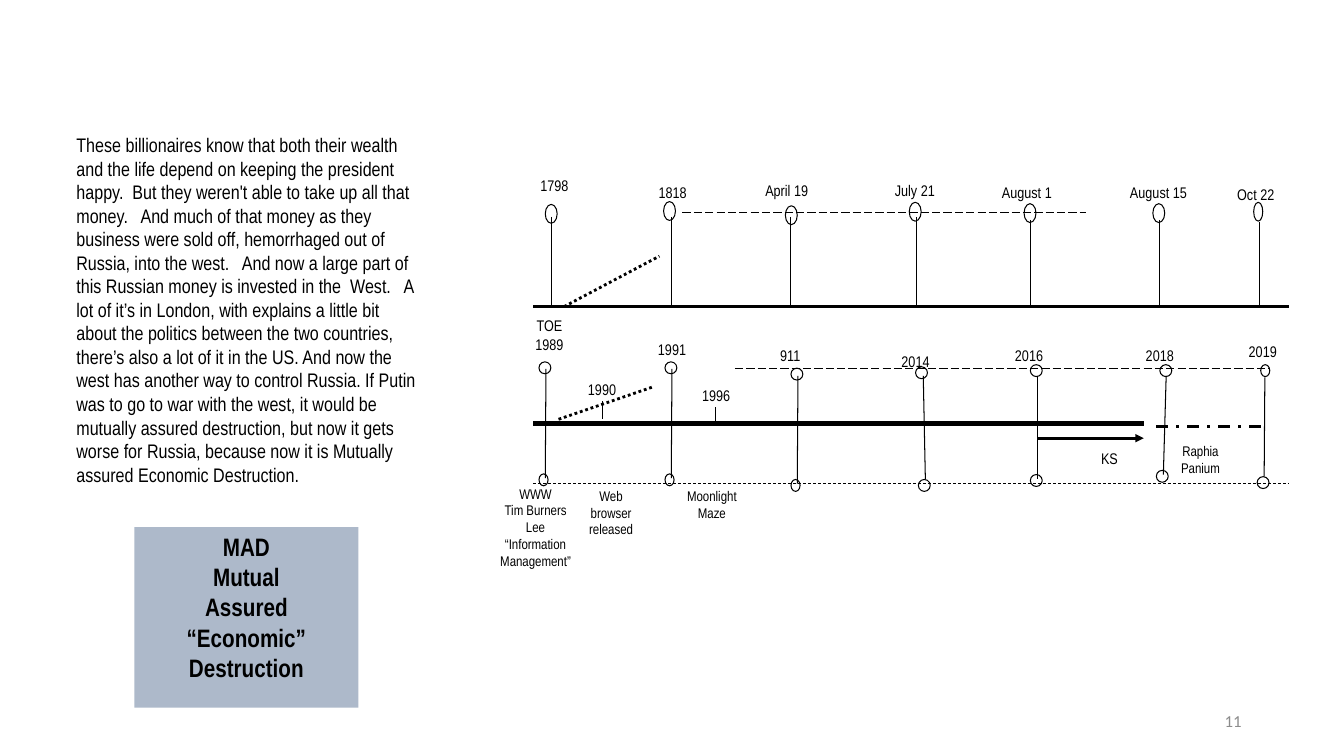
from lxml.etree import SubElement
from pptx import Presentation
from pptx.dml.color import RGBColor
from pptx.enum.dml import MSO_LINE as DASH
from pptx.enum.shapes import MSO_CONNECTOR as CONN, MSO_SHAPE as SHAPE
from pptx.enum.text import MSO_ANCHOR as ANCHOR, PP_ALIGN as ALIGN
from pptx.oxml.ns import qn
from pptx.util import Pt

hex_color = RGBColor.from_string
BLACK = "000000"

prs = Presentation()
prs.slide_width, prs.slide_height = Pt(960), Pt(540)
s = prs.slides.add_slide(prs.slide_layouts[6])


def add_line(x1, y1, x2, y2, width=0.75, dash=None, arrow=False):
    c = s.shapes.add_connector(CONN.STRAIGHT, Pt(x1), Pt(y1), Pt(x2), Pt(y2))
    c.line.color.rgb = hex_color(BLACK)
    c.line.width = Pt(width)
    if dash:
        c.line.dash_style = dash
    if arrow:
        SubElement(c.line._get_or_add_ln(), qn("a:tailEnd"), type="triangle")
    SubElement(c._element.spPr, qn("a:effectLst"))


def write_text(sp, text, size, align=ALIGN.CENTER, inset=(3, 3), bold=False,
               font="Arial Narrow", color=BLACK, anchor=ANCHOR.TOP):
    """Fill a shape with text, one paragraph per line of the string."""
    tf = sp.text_frame
    tf.word_wrap = True
    tf.vertical_anchor = anchor
    tf.margin_left = tf.margin_right = Pt(inset[0])
    tf.margin_top = tf.margin_bottom = Pt(inset[1])
    for i, line in enumerate(text.split("\n")):
        p = tf.add_paragraph() if i else tf.paragraphs[0]
        p.alignment = align
        r = p.add_run()
        r.text = line
        r.font.name, r.font.size, r.font.bold = font, Pt(size), bold
        r.font.color.rgb = hex_color(color)


# Upper timeline: stem x, stem top, circle (left, top, width)
upper_events = [
    (394, 155, (389.5, 146, 8.5)),
    (479.5, 155, (474, 144, 8.5)),
    (565, 155, (561, 147, 8.5)),
    (655, 155, (649.5, 144.5, 8.5)),
    (736, 157, (731.5, 145.5, 8.5)),
    (828.5, 157, (823.5, 145.5, 8.5)),
    (899.5, 158.5, (895.5, 144.5, 6.5)),
]
# Lower timeline: stem ends, top circle, bottom circle
lower_events = [
    ((390, 263.5, 389.5, 341.5), (385, 258.5, 8.5), (385, 338.5, 6.5)),
    ((480, 263.5, 479.5, 341.5), (475, 258.5, 8.5), (475, 338.5, 6.5)),
    ((570, 268.5, 569.5, 345.5), (565, 263, 8.5), (565, 342.5, 6.5)),
    ((659.5, 268.5, 661, 342.5), (654, 262, 8.5), (656, 342.5, 8.5)),
    ((741, 268.5, 741, 342), (736, 260.5, 8.5), (736, 339, 8.5)),
    ((833, 268.5, 831, 339), (828.5, 260.5, 8.5), (826, 336, 8.5)),
    ((903.5, 269.5, 903, 340.5), (900.5, 260.5, 6.5), (898, 340.5, 8.5)),
]
circles = []
for x, top, circle in upper_events:
    add_line(x, top, x, 218.5)
    circles.append((*circle, 13.5))
for stem, top_circle, bottom_circle in lower_events:
    add_line(*stem)
    circles += [(*top_circle, 8.5), (*bottom_circle, 8.5)]
for x, y, w, h in circles:
    sp = s.shapes.add_shape(SHAPE.OVAL, Pt(x), Pt(y), Pt(w), Pt(h))
    sp.shadow.inherit = False
    sp.fill.background()
    sp.line.color.rgb = hex_color(BLACK)
    sp.line.width = Pt(0.75)

# Axes, links and ticks
add_line(381, 219, 921, 219, 2)
add_line(487.5, 151.5, 776, 151.5, dash=DASH.LONG_DASH)
add_line(403, 219, 471, 183, 2, DASH.ROUND_DOT)
add_line(381, 302.5, 817, 302.5, 3)
add_line(525, 263.5, 907, 263.5, dash=DASH.LONG_DASH)
add_line(399, 299.5, 466, 276.5, 2, DASH.ROUND_DOT)
add_line(741, 313, 817, 313, 2, arrow=True)
add_line(826, 304.5, 903, 304.5, 2, DASH.DASH_DOT)
add_line(381, 345, 921, 345, 0.5, DASH.DASH)
add_line(430, 286.5, 430, 299.5, 0.5)
add_line(511, 291, 511, 304.5, 0.5)

# Labels: text, centre x, top, width, font size
labels = [
    ("1798", 396, 123, 48, 11), ("1818", 480.5, 127.5, 48, 11),
    ("April 19", 562, 126.5, 48, 11), ("July 21", 653.5, 126.5, 48, 11),
    ("August 1", 733.5, 127.5, 48, 11), ("August 15", 827.5, 127.5, 48, 11),
    ("Oct 22", 897, 129, 48, 11),
    ("TOE\n1989", 392.5, 223, 50, 11), ("1991", 480, 240, 37, 11),
    ("911", 564.5, 244, 35, 11), ("2014", 654, 248.5, 41, 11),
    ("2016", 735, 244, 43, 11), ("2018", 828.5, 244, 41, 11),
    ("2019", 902, 241, 38, 11),
    ("1990", 430, 268.5, 37, 11), ("1996", 511.5, 273, 37, 11),
    ("KS", 792.5, 317.5, 23, 11), ("Raphia\nPanium", 857.5, 313, 45, 10),
    ("WWW\nTim Burners Lee\n“Information Management”", 382.5, 343.5, 60, 10),
    ("Web browser released", 436.5, 345, 50, 10),
    ("Moonlight Maze", 508.5, 345, 50, 10),
]
for text, center, top, width, size in labels:
    height = 18 + 14 * text.count("\n")
    tb = s.shapes.add_textbox(Pt(center - width / 2), Pt(top), Pt(width), Pt(height))
    write_text(tb, text, size)

story = (
    "These billionaires know that both their wealth and the life depend on "
    "keeping the president happy.  But they weren't able to take up all that "
    "money.   And much of that money as they business were sold off, "
    "hemorrhaged out of Russia, into the west.   And now a large part of this "
    "Russian money is invested in the  West.   A lot of it’s in London, "
    "with explains a little bit about the politics between the two countries, "
    "there’s also a lot of it in the US. And now the west has another way to "
    "control Russia. If Putin was to go to war with the west, it would "
    "be mutually assured destruction, but now it gets worse for Russia, "
    "because now it is Mutually assured Economic Destruction."
)
tb = s.shapes.add_textbox(Pt(47.5), Pt(91.5), Pt(260.5), Pt(276.5))
write_text(tb, story, 14, ALIGN.LEFT, (7.2, 3.6))

mad = s.shapes.add_shape(SHAPE.RECTANGLE, Pt(96), Pt(376.5), Pt(160), Pt(129))
mad.shadow.inherit = False
mad.fill.solid()
mad.fill.fore_color.rgb = hex_color("ADB9CA")
mad.line.fill.background()
write_text(mad, "MAD\nMutual\nAssured\n“Economic”\nDestruction", 18, bold=True)

number = s.shapes.add_textbox(Pt(678), Pt(500.5), Pt(216), Pt(29))
write_text(number, "11", 12, ALIGN.RIGHT, (7.2, 3.6), font="Calibri",
           color="8C8C8C", anchor=ANCHOR.MIDDLE)

prs.save("out.pptx")
